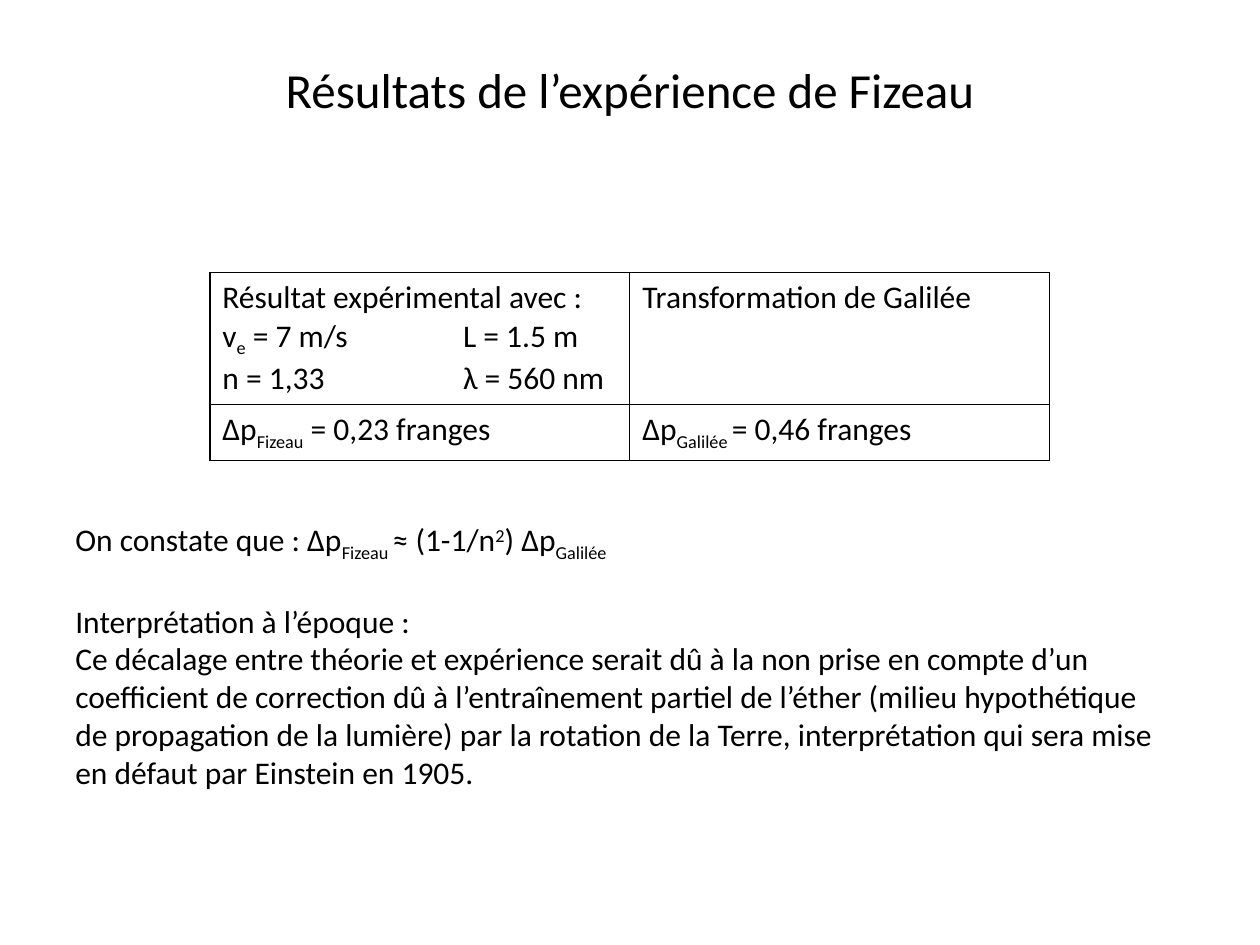
from lxml import etree
from pptx import Presentation
from pptx.dml.color import RGBColor
from pptx.enum.text import MSO_ANCHOR, PP_ALIGN
from pptx.oxml.ns import qn
from pptx.util import Cm, Pt

MIDDLE = MSO_ANCHOR.MIDDLE
CENTER = PP_ALIGN.CENTER
COLORS = {"text": "000000", "border": "000000"}
FONT = "Calibri"
SUB, SUPER = -25000, 30000


def write(frame, lines, size=18):
    """Fill a text frame; a line is a list of strings or (string, baseline) pairs."""
    for number, line in enumerate(lines):
        para = frame.paragraphs[0] if number == 0 else frame.add_paragraph()
        for piece in line:
            text, baseline = (piece, 0) if isinstance(piece, str) else piece
            span = para.add_run()
            span.text = text
            for name, value in {"name": FONT, "size": Pt(size)}.items():
                setattr(span.font, name, value)
            span.font.color.rgb = RGBColor.from_string(COLORS["text"])
            if baseline:
                span.font._element.set("baseline", str(baseline))


def draw_borders(cell):
    properties = cell._tc.get_or_add_tcPr()
    for side in ("a:lnL", "a:lnR", "a:lnT", "a:lnB"):
        line = etree.SubElement(properties, qn(side), w=str(Pt(1)))
        fill = etree.SubElement(line, qn("a:solidFill"))
        etree.SubElement(fill, qn("a:srgbClr"), val=COLORS["border"])


deck = Presentation()
deck.slide_width, deck.slide_height = Cm(25.4), Cm(19.05)
page = deck.slides.add_slide(deck.slide_layouts[6])

# Title
title = page.shapes.add_textbox(Cm(1.27), Cm(0.2), Cm(22.86), Cm(3.18)).text_frame
for name, value in {"word_wrap": True, "vertical_anchor": MIDDLE}.items():
    setattr(title, name, value)
write(title, [["Résultats de l’expérience de Fizeau"]], size=28)
title.paragraphs[0].alignment = CENTER

# Results: measured shift beside the Galilean prediction
results = [
    [
        [
            ["Résultat expérimental avec :"],
            ["v", ("e", SUB), " = 7 m/s\tL = 1.5 m"],
            ["n = 1,33\tλ = 560 nm"],
        ],
        [["Transformation de Galilée"]],
    ],
    [
        [["Δp", ("Fizeau", SUB), " = 0,23 franges"]],
        [["Δp", ("Galilée ", SUB), "= 0,46 franges"]],
    ],
]
table = page.shapes.add_table(2, 2, Cm(4.23), Cm(5.49), Cm(16.93), Cm(3.79)).table
for name in ("first_row", "horz_banding"):
    setattr(table, name, False)
for row, height in zip(table.rows, (2.66, 1.13)):
    row.height = Cm(height)
for row, contents in zip(table.rows, results):
    for cell, lines in zip(row.cells, contents):
        write(cell.text_frame, lines)
        draw_borders(cell)
        cell.fill.background()

# The second value of each experimental setting starts at a tab stop
for para in table.cell(0, 0).text_frame.paragraphs[1:]:
    stops = etree.SubElement(para._p.get_or_add_pPr(), qn("a:tabLst"))
    etree.SubElement(stops, qn("a:tab"), pos=str(Cm(4.85)), algn="l")

# Conclusion
conclusion = page.shapes.add_textbox(Cm(1.27), Cm(10.36), Cm(22.25), Cm(5.64)).text_frame
conclusion.word_wrap = True
write(conclusion, [
    ["On constate que : Δp", ("Fizeau ", SUB), "≈ (1-1/n", ("2", SUPER), ") Δp", ("Galilée", SUB)],
    ["Interprétation à l’époque :"],
    ["Ce décalage entre théorie et expérience serait dû à la non prise en compte d’un "
     "coefficient de correction dû à l’entraînement partiel de l’éther (milieu hypothétique "
     "de propagation de la lumière) par la rotation de la Terre, interprétation qui sera mise "
     "en défaut par Einstein en 1905."],
])
conclusion.paragraphs[1].space_before = Pt(22)

deck.save("out.pptx")
